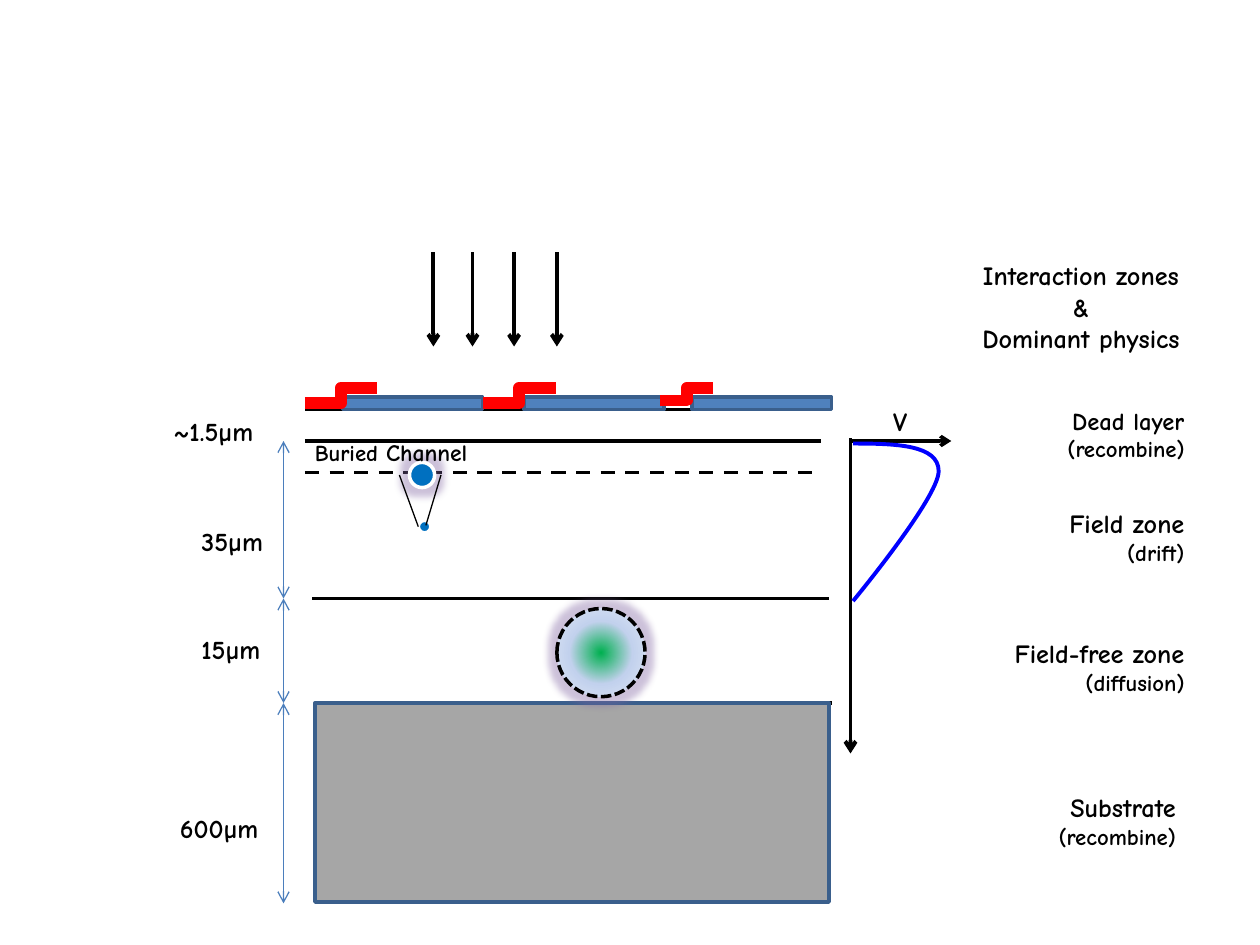
from pptx import Presentation
from pptx.dml.color import RGBColor
from pptx.enum.dml import MSO_LINE as Dash
from pptx.enum.shapes import MSO_CONNECTOR as Conn, MSO_SHAPE as Geom
from pptx.enum.text import MSO_AUTO_SIZE as Fit, PP_ALIGN as Align
from pptx.oxml import parse_xml
from pptx.oxml.ns import qn
from pptx.util import Inches, Pt
from lxml.etree import SubElement

BLACK = RGBColor(0x00, 0x00, 0x00)
WHITE = RGBColor(0xFF, 0xFF, 0xFF)
GRAY = RGBColor(0xA6, 0xA6, 0xA6)
STEEL = RGBColor(0x4F, 0x81, 0xBD)
NAVY = RGBColor(0x3A, 0x5F, 0x8C)
SCALE = RGBColor(0x4B, 0x7E, 0xBC)
AZURE = RGBColor(0x00, 0x70, 0xC0)
BLUE = RGBColor(0x00, 0x00, 0xFF)
RED = RGBColor(0xFF, 0x00, 0x00)
GREEN = RGBColor(0x00, 0xB0, 0x50)
PALE = RGBColor(0xC2, 0xD1, 0xED)
MIST = RGBColor(0xE1, 0xE8, 0xF5)
PURPLE = RGBColor(0x80, 0x64, 0xA2)

FONT = "Comic Neue"
NS = "http://schemas.openxmlformats.org/drawingml/2006/main"


def style(line, color, width, dash=None):
    line.color.rgb = color
    look = {"width": Pt(width), "dash_style": dash}
    for name, value in look.items():
        if value is not None:
            setattr(line, name, value)


def add_line(slide, start, end, color=BLACK, width=2, dash=None,
             ends=(), kind=Conn.STRAIGHT):
    """Draw a connector; ends lists the arrowheads, headEnd or tailEnd."""
    points = [Inches(v) for v in (*start, *end)]
    link = slide.shapes.add_connector(kind, *points)
    style(link.line, color, width, dash)
    props = link._element.spPr
    for end_tag in ends:
        SubElement(props.find(qn("a:ln")), qn("a:" + end_tag), type="arrow")
    SubElement(props, qn("a:effectLst"))


def add_box(slide, geom, box, fill, edge, width=2, dash=None):
    shape = slide.shapes.add_shape(geom, *[Inches(v) for v in box])
    shape.shadow.inherit = False
    if fill is not None:
        shape.fill.solid()
        shape.fill.fore_color.rgb = fill
    style(shape.line, edge, width, dash)
    return shape


def add_glow(shape, radius):
    effects = shape._element.spPr.find(qn("a:effectLst"))
    glow = SubElement(effects, qn("a:glow"), rad=str(Pt(radius)))
    tint = SubElement(glow, qn("a:srgbClr"), val=str(PURPLE))
    SubElement(tint, qn("a:alpha"), val="40000")


def fill_radial(shape, stops):
    marks = "".join(
        f'<a:gs pos="{pos * 1000}"><a:srgbClr val="{color}"/></a:gs>'
        for pos, color in stops)
    grad = parse_xml(
        f'<a:gradFill xmlns:a="{NS}" rotWithShape="1"><a:gsLst>{marks}</a:gsLst>'
        '<a:path path="circle"><a:fillToRect l="50000" t="50000" r="50000"'
        ' b="50000"/></a:path></a:gradFill>')
    shape._element.spPr.find(qn("a:prstGeom")).addnext(grad)


def add_curve(slide, start, points, color, width):
    """Draw cubic Bezier segments, three points to each."""
    pen = slide.shapes.build_freeform(*[Inches(v) for v in start])
    pen.add_line_segments(
        [(Inches(x), Inches(y)) for x, y in points], close=False)
    curve = pen.convert_to_shape()
    curve.shadow.inherit = False
    curve.fill.background()
    style(curve.line, color, width)
    steps = list(curve._element.spPr.iter(qn("a:lnTo")))
    for i in range(0, len(steps), 3):
        bend = SubElement(steps[i].getparent(), qn("a:cubicBezTo"))
        for step in steps[i:i + 3]:
            bend.append(step[0])
            step.getparent().remove(step)


def add_text(slide, box, lines, align=Align.LEFT):
    """Write lines, each a list of (text, size) runs."""
    frame = slide.shapes.add_textbox(*[Inches(v) for v in box]).text_frame
    frame.word_wrap = False
    frame.auto_size = Fit.SHAPE_TO_FIT_TEXT
    for i, runs in enumerate(lines):
        para = frame.add_paragraph() if i else frame.paragraphs[0]
        para.alignment = align
        for text, size in runs:
            run = para.add_run()
            run.text = text
            look = {"name": FONT, "size": Pt(size), "bold": True}
            for name, value in look.items():
                setattr(run.font, name, value)
            run.font.color.rgb = BLACK


def draw_layers(slide):
    for left, y, dash in ((2.42, 3.25, None), (2.42, 3.75, Dash.DASH),
                          (2.48, 4.75, None), (2.5, 5.58, None),
                          (2.42, 3.5, None)):
        add_line(slide, (left, y), (left + 4.1, y), dash=dash)
    add_box(slide, Geom.RECTANGLE, (2.5, 5.58, 4.08, 1.58), GRAY, NAVY)
    depths = (3.5, 4.75, 5.58, 7.17)
    for top, low in zip(depths, depths[1:]):
        add_line(slide, (2.25, top), (2.25, low), SCALE, 0.75,
                 ends=("headEnd", "tailEnd"))


def draw_labels(slide):
    for left, top, width, text in (
            (1.5, 4.12, 0.75, "35µm"), (1.5, 4.98, 0.75, "15µm"),
            (1.33, 6.4, 0.88, "600µm"), (1.28, 3.25, 0.97, "~1.5µm"),
            (6.99, 3.17, 0.34, "V")):
        add_text(slide, (left, top, width, 0.35), [[(text, 15)]])
    for left, top, width, size, zone, effect in (
            (8.26, 3.17, 1.24, 14, "Dead layer", "(recombine)"),
            (8.27, 3.98, 1.23, 15, "Field zone", "(drift)"),
            (7.7, 5.01, 1.8, 15, "Field-free zone", "(diffusion)"),
            (8.21, 6.23, 1.22, 15, "Substrate", "(recombine)")):
        add_text(slide, (left, top, width, 0.57),
                 [[(zone, size)], [(effect, 13)]], Align.RIGHT)
    add_text(slide, (2.4, 3.43, 1.53, 0.33),
             [[("Buried ", 13), ("Channel", 13.5)]])
    title = ("Interaction zones", "&", "Dominant physics")
    add_text(slide, (7.58, 2.01, 2, 0.86),
             [[(text, 15)] for text in title], Align.CENTER)


def draw_plot(slide):
    add_line(slide, (6.75, 3.48), (6.75, 5.98), width=2.25, ends=("tailEnd",))
    add_line(slide, (6.75, 3.5), (7.55, 3.5), ends=("tailEnd",))
    add_curve(slide, (6.77, 3.52),
              [(7.11, 3.52), (7.45, 3.53), (7.45, 3.74),
               (7.45, 3.95), (6.77, 4.77), (6.77, 4.77)], BLUE, 2.25)


def draw_gates(slide):
    for left in (2.72, 4.16, 5.49):
        add_box(slide, Geom.RECTANGLE, (left, 3.15, 1.11, 0.1), STEEL, NAVY)
    for left, low, right in ((2.42, 3.2, 2.99), (3.83, 3.2, 4.41),
                             (5.24, 3.18, 5.66)):
        add_line(slide, (left, low), (right, 3.08), RED, 6.75,
                 kind=Conn.ELBOW)


def draw_charge(slide):
    add_box(slide, Geom.OVAL, (3.32, 4.13, 0.1, 0.1), AZURE, WHITE)
    packet = add_box(slide, Geom.OVAL, (3.25, 3.67, 0.2, 0.2), AZURE, WHITE)
    add_glow(packet, 8)
    add_line(slide, (3.17, 3.77), (3.32, 4.18), width=0.75)
    add_line(slide, (3.5, 3.77), (3.38, 4.17), width=0.75)
    cloud = add_box(slide, Geom.OVAL, (4.42, 4.83, 0.7, 0.7), None, BLACK,
                    dash=Dash.SQUARE_DOT)
    fill_radial(cloud, ((0, GREEN), (50, PALE), (100, MIST)))
    add_glow(cloud, 8)


def draw_rays(slide):
    for x in (3.44, 3.75, 4.08, 4.42):
        add_line(slide, (x, 2), (x, 2.75), width=2.25, ends=("tailEnd",))


def main():
    deck = Presentation()
    deck.slide_width, deck.slide_height = Inches(10), Inches(7.5)
    slide = deck.slides.add_slide(deck.slide_layouts[6])
    for draw in (draw_layers, draw_plot, draw_gates, draw_charge,
                 draw_rays, draw_labels):
        draw(slide)
    deck.save("out.pptx")


if __name__ == "__main__":
    main()
